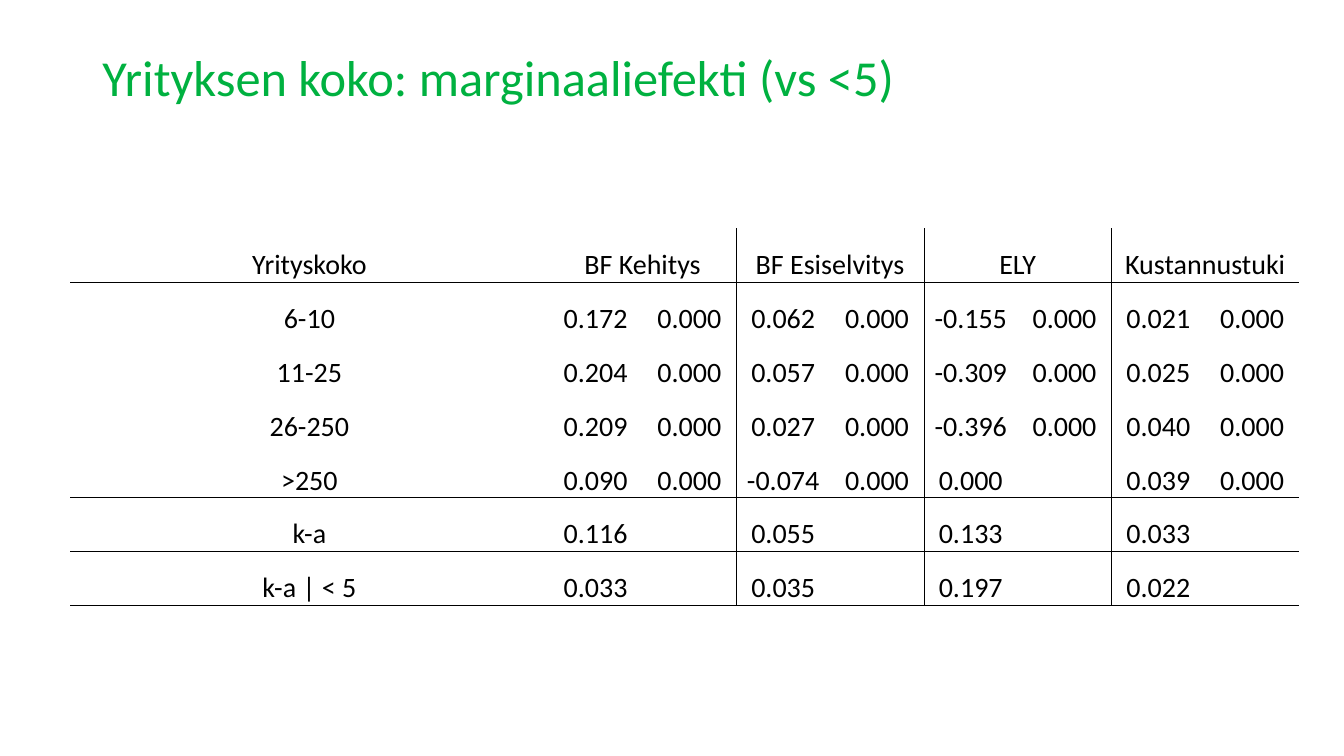
from pptx import Presentation
from pptx.dml.color import RGBColor
from pptx.enum.text import MSO_ANCHOR, MSO_AUTO_SIZE, PP_ALIGN
from pptx.oxml import parse_xml
from pptx.oxml.ns import nsdecls
from pptx.util import Pt

PX = 6350
THEME = {
    "title": {"name": "Calibri", "size": Pt(36), "color": "00B140"},
    "cell": {"name": "Calibri", "size": Pt(20), "color": "000000"},
    "rule": {"color": "000000", "width": Pt(0.5)},
}
HEADERS = ["Yrityskoko", "BF Kehitys", "BF Esiselvitys", "ELY", "Kustannustuki"]
ROWS = [
    ["6-10", "0.172", "0.000", "0.062", "0.000", "-0.155", "0.000", "0.021", "0.000"],
    ["11-25", "0.204", "0.000", "0.057", "0.000", "-0.309", "0.000", "0.025", "0.000"],
    ["26-250", "0.209", "0.000", "0.027", "0.000", "-0.396", "0.000", "0.040", "0.000"],
    [">250", "0.090", "0.000", "-0.074", "0.000", "0.000", "", "0.039", "0.000"],
    ["k-a", "0.116", "", "0.055", "", "0.133", "", "0.033", ""],
    ["k-a | < 5", "0.033", "", "0.035", "", "0.197", "", "0.022", ""],
]
RULED_ROWS = {0, 4, 5, 6}
RULED_COLS = {2, 4, 6}


def write(p, text, style, align):
    p.alignment = align
    r = p.add_run()
    r.text = text
    for key in ("name", "size"):
        setattr(r.font, key, style[key])
    r.font.color.rgb = RGBColor.from_string(style["color"])


def add_border(cell, side, ruled):
    rule = THEME["rule"]
    fill = "<a:noFill/>"
    if ruled:
        fill = f'<a:solidFill><a:srgbClr val="{rule["color"]}"/></a:solidFill>'
    cell._tc.get_or_add_tcPr().append(parse_xml(
        f'<a:ln{side} {nsdecls("a")} w="{rule["width"]}">{fill}</a:ln{side}>'))


prs = Presentation()
prs.slide_width, prs.slide_height = 1920 * PX, 1080 * PX
s = prs.slides.add_slide(prs.slide_layouts[5])

title = s.shapes.title
for key, px in {"left": 132, "top": 68, "width": 1656, "height": 168}.items():
    setattr(title, key, px * PX)
tf = title.text_frame
for key, value in {"word_wrap": True, "auto_size": MSO_AUTO_SIZE.NONE,
                   "vertical_anchor": MSO_ANCHOR.TOP}.items():
    setattr(tf, key, value)
p = tf.paragraphs[0]
p.line_spacing = 0.9
write(p, "Yrityksen koko: marginaaliefekti (vs <5)", THEME["title"], PP_ALIGN.LEFT)

widths = [684] + [134] * 8
heights = [77] * 7
table = s.shapes.add_table(len(heights), len(widths), 100 * PX, 326 * PX,
                           sum(widths) * PX, sum(heights) * PX).table
table.first_row = table.horz_banding = False
for column, px in zip(table.columns, widths):
    column.width = px * PX
for row, px in zip(table.rows, heights):
    row.height = px * PX

header_row = [HEADERS[0]]
for col, text in enumerate(HEADERS[1:]):
    table.cell(0, 2 * col + 1).merge(table.cell(0, 2 * col + 2))
    header_row += [text, ""]

cell_format = {"vertical_anchor": MSO_ANCHOR.BOTTOM, "margin_left": PX,
               "margin_right": PX, "margin_top": PX, "margin_bottom": 0}
for i, texts in enumerate([header_row] + ROWS):
    for j, text in enumerate(texts):
        cell = table.cell(i, j)
        for key, value in cell_format.items():
            setattr(cell, key, value)
        last_col = j + cell.span_width - 1 if cell.is_merge_origin else j
        add_border(cell, "L", j - 1 in RULED_COLS)
        add_border(cell, "R", last_col in RULED_COLS)
        add_border(cell, "T", i - 1 in RULED_ROWS)
        add_border(cell, "B", i in RULED_ROWS)
        cell.fill.background()
        if text:
            write(cell.text_frame.paragraphs[0], text, THEME["cell"], PP_ALIGN.CENTER)

prs.save("out.pptx")
